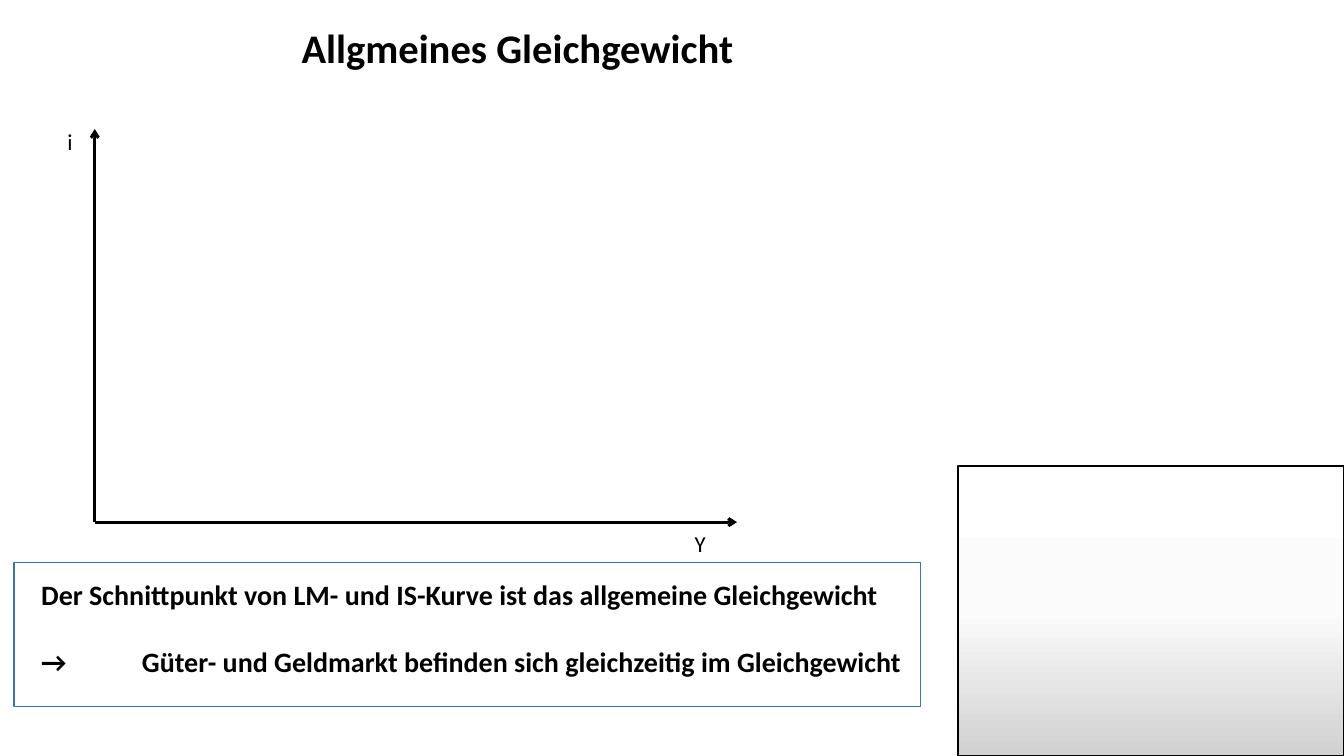
from copy import deepcopy
from dataclasses import dataclass

from lxml import etree
from pptx import Presentation
from pptx.dml.color import RGBColor
from pptx.enum.shapes import MSO_CONNECTOR, MSO_SHAPE
from pptx.enum.text import MSO_ANCHOR, PP_ALIGN
from pptx.oxml.ns import qn
from pptx.util import Inches, Pt

STRAIGHT = MSO_CONNECTOR.STRAIGHT
RECTANGLE = MSO_SHAPE.RECTANGLE
TOP, MIDDLE = MSO_ANCHOR.TOP, MSO_ANCHOR.MIDDLE
LEFT, CENTER = PP_ALIGN.LEFT, PP_ALIGN.CENTER
TITLE_ONLY = 5
FONT = "Calibri"
COLORS = {"black": "000000", "frame": "43739E"}
PANEL_STOPS = ((0, "FFFFFF"), (0.5, "FBFBFB"), (1, "D1D1D1"))
ORIGIN = (0.94, 5.18)
TAB_STOP = Inches(1)


@dataclass
class TextItem:
    box: tuple[float, float, float, float]
    lines: tuple[str, ...]
    size: float
    bold: bool = False
    wrap: bool = True
    gap: float = 0


@dataclass
class Frame:
    box: tuple[float, float, float, float]
    color: str
    width: float = 1
    stops: tuple = ()


TITLE = TextItem((0.98, 0.06, 8.31, 0.81), ("Allgmeines Gleichgewicht",), 29, True)
TEXTS = (
    TextItem((0.57, 1.22, 0.25, 0.38), ("i",), 16.3, wrap=False),
    TextItem((6.79, 5.21, 0.31, 0.38), ("Y",), 16.3, wrap=False),
    TextItem(
        (0.31, 5.68, 8.83, 1.11),
        (
            "Der Schnittpunkt von LM- und IS-Kurve ist das allgemeine Gleichgewicht",
            "→\tGüter- und Geldmarkt befinden sich gleichzeitig im Gleichgewicht",
        ),
        20, True, gap=24,
    ),
)
AXIS_ENDS = ((ORIGIN[0], 1.28), (7.31, ORIGIN[1]))
FRAMES = (
    Frame((0.14, 5.58, 8.99, 1.43), "frame"),
    Frame((9.5, 4.62, 3.83, 2.88), "black", 1.25, PANEL_STOPS),
)


def rgb(name: str) -> RGBColor:
    return RGBColor.from_string(COLORS[name])


def add_tab_stop(paragraph) -> None:
    properties = paragraph._p.get_or_add_pPr()
    tab_list = etree.SubElement(properties, qn("a:tabLst"))
    etree.SubElement(tab_list, qn("a:tab"), pos=str(int(TAB_STOP)), algn="l")


def write_text(shape, item: TextItem, alignment, anchor) -> None:
    frame = shape.text_frame
    frame.word_wrap = item.wrap
    frame.vertical_anchor = anchor
    font_format = {"name": FONT, "size": Pt(item.size), "bold": item.bold}
    for index, line in enumerate(item.lines):
        paragraph = frame.add_paragraph() if index else frame.paragraphs[0]
        paragraph.alignment = alignment
        paragraph.space_before = Pt(item.gap if index else 0)
        if "\t" in line:
            add_tab_stop(paragraph)
        run = paragraph.add_run()
        run.text = line
        for attribute, value in font_format.items():
            setattr(run.font, attribute, value)
        run.font.color.rgb = rgb("black")


def add_title(slide, item: TextItem) -> None:
    title = slide.shapes.title
    title.left, title.top, title.width, title.height = map(Inches, item.box)
    write_text(title, item, CENTER, MIDDLE)


def add_text(slide, item: TextItem) -> None:
    write_text(slide.shapes.add_textbox(*map(Inches, item.box)), item, LEFT, TOP)


def add_axis(slide, end: tuple[float, float]) -> None:
    axis = slide.shapes.add_connector(STRAIGHT, *map(Inches, ORIGIN + end))
    axis.line.color.rgb = rgb("black")
    axis.line.width = Pt(2)
    etree.SubElement(axis.line._get_or_add_ln(), qn("a:tailEnd"), type="arrow")
    etree.SubElement(axis._element.spPr, qn("a:effectLst"))


def fill_gradient(shape, stops: tuple) -> None:
    shape.fill.gradient()
    shape.fill.gradient_angle = 270
    # The default gradient has two stops; add one for the middle
    first = shape._element.spPr.find(".//" + qn("a:gs"))
    first.addnext(deepcopy(first))
    for stop, (position, color) in zip(shape.fill.gradient_stops, stops):
        stop.position = position
        stop.color.rgb = RGBColor.from_string(color)


def add_frame(slide, frame: Frame) -> None:
    shape = slide.shapes.add_shape(RECTANGLE, *map(Inches, frame.box))
    shape.shadow.inherit = False
    shape.line.color.rgb = rgb(frame.color)
    shape.line.width = Pt(frame.width)
    if frame.stops:
        fill_gradient(shape, frame.stops)
    else:
        shape.fill.background()


def main() -> None:
    presentation = Presentation()
    presentation.slide_width = Inches(13.33)
    presentation.slide_height = Inches(7.5)
    slide = presentation.slides.add_slide(presentation.slide_layouts[TITLE_ONLY])

    # Title
    add_title(slide, TITLE)
    # Coordinate axes
    for end in AXIS_ENDS:
        add_axis(slide, end)
    # Axis labels and conclusion
    for item in TEXTS:
        add_text(slide, item)
    # Conclusion border and shaded panel
    for frame in FRAMES:
        add_frame(slide, frame)

    presentation.save("out.pptx")


if __name__ == "__main__":
    main()
